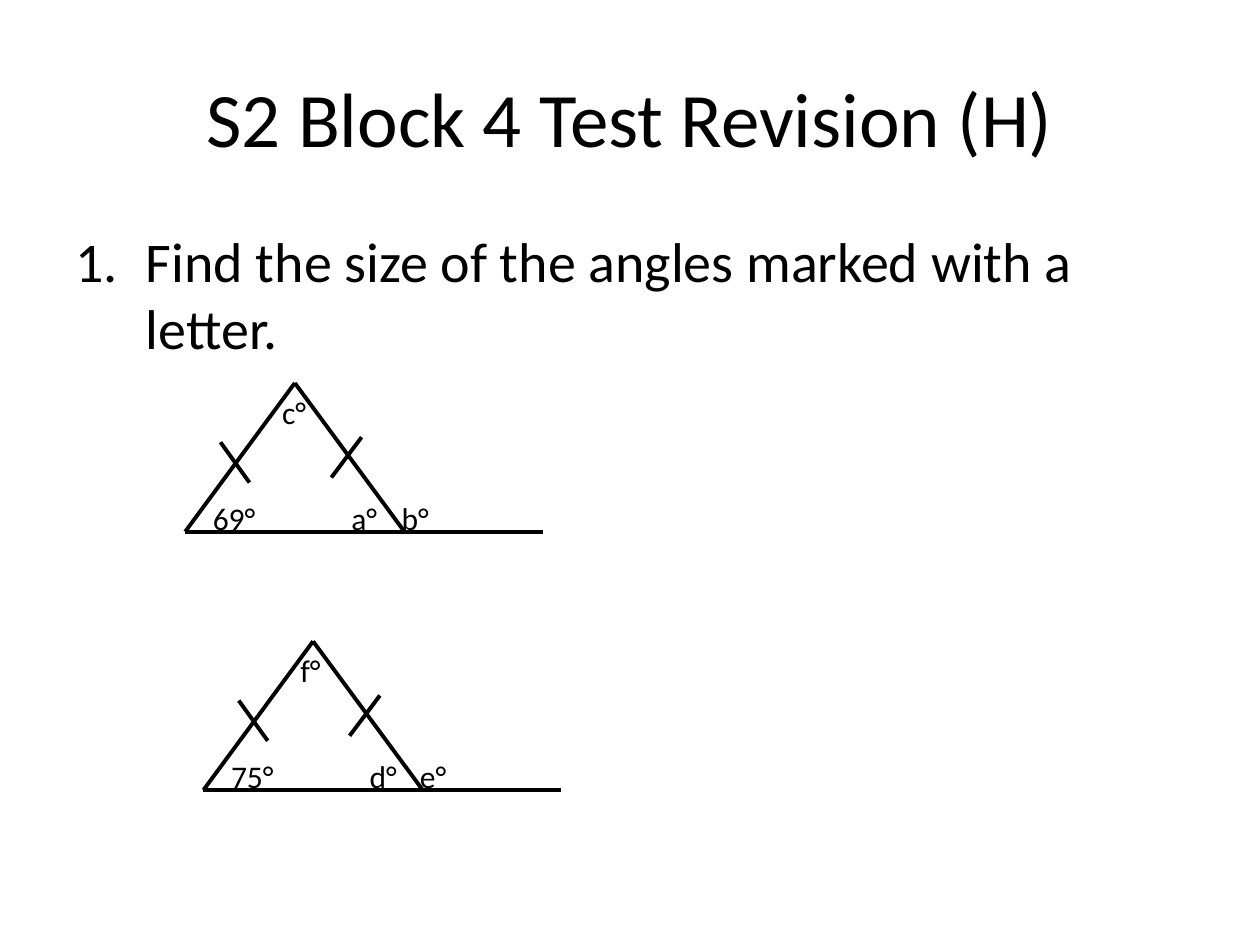
from lxml import etree
from pptx import Presentation
from pptx import util as u
from pptx.dml.color import RGBColor
from pptx.enum import shapes, text
from pptx.oxml.ns import qn

COLOURS = {"ink": "000000", "paper": "FFFFFF"}
FONT = "Calibri"
COLUMNS, ROWS = 1000, 750
WIDTH, HEIGHT = u.Inches(10), u.Inches(7.5)

# Grid steps (columns, rows) from the lower left corner of a triangle
CORNER, APEX, FOOT, BASE_END = (0, 0), (87, -118), (174, 0), (284, 0)
SEGMENTS = [
    (CORNER, BASE_END),
    (CORNER, APEX),
    (FOOT, APEX),
    ((116, -43), (140, -75)),
    ((51, -39), (28, -71)),
]
LABEL_SPOTS = [(12, -31, 55), (122, -31, 44), (162, -31, 44), (67, -115, 40)]
LABEL_ROWS = 40

FIGURES = [
    ((147, 422), ["69°", "a°", "b°", "c°"]),
    ((161.5, 627), ["75°", "d°", "e°", "f°"]),
]


def x_at(columns):
    return round(WIDTH * columns / COLUMNS)


def y_at(rows):
    return round(HEIGHT * rows / ROWS)


def colour(name):
    return RGBColor.from_string(COLOURS[name])


def add_text(parent, words, left, top, width, height, size, frame_format, align=None):
    """Place one paragraph on the grid and return it."""
    box = parent.add_textbox(x_at(left), y_at(top), x_at(width), y_at(height))
    for name, value in frame_format.items():
        setattr(box.text_frame, name, value)
    para = box.text_frame.paragraphs[0]
    para.alignment = align
    span = para.add_run()
    span.text = words
    for name, value in {"name": FONT, "size": u.Pt(size)}.items():
        setattr(span.font, name, value)
    span.font.color.rgb = colour("ink")
    return para


def number_paragraph(para, indent):
    properties = para._p.get_or_add_pPr()
    properties.set("marL", str(indent))
    properties.set("indent", str(-indent))
    etree.SubElement(properties, qn("a:buFont"), typeface="+mj-lt")
    etree.SubElement(properties, qn("a:buAutoNum"), type="arabicPeriod")


def add_line(parent, start, end):
    line = parent.add_connector(
        shapes.MSO_CONNECTOR.STRAIGHT,
        x_at(start[0]), y_at(start[1]), x_at(end[0]), y_at(end[1]),
    )
    line.line.color.rgb = colour("ink")
    line.line.width = u.Pt(2.25)
    etree.SubElement(line._element.spPr, qn("a:effectLst"))


def add_triangle(page, origin, labels):
    """Group an isosceles triangle, its extended base, ticks and angles."""
    column, row = origin
    parts = page.shapes.add_group_shape().shapes
    for ends in SEGMENTS:
        add_line(parts, *[(column + x, row + y) for x, y in ends])
    label_format = {
        "word_wrap": False,
        "auto_size": text.MSO_AUTO_SIZE.SHAPE_TO_FIT_TEXT,
    }
    for label, (x, y, width) in zip(labels, LABEL_SPOTS):
        add_text(parts, label, column + x, row + y, width, LABEL_ROWS, 18, label_format)


def main():
    deck = Presentation()
    deck.slide_width, deck.slide_height = WIDTH, HEIGHT
    page = deck.slides.add_slide(deck.slide_layouts[6])
    page.background.fill.solid()
    page.background.fill.fore_color.rgb = colour("paper")

    add_text(
        page.shapes, "S2 Block 4 Test Revision (H)", 50, 30, 900, 125, 44,
        {"word_wrap": True, "vertical_anchor": text.MSO_ANCHOR.MIDDLE},
        text.PP_ALIGN.CENTER,
    )
    question = add_text(
        page.shapes, "Find the size of the angles marked with a letter.",
        50, 175, 900, 495, 32, {"word_wrap": True},
    )
    number_paragraph(question, x_at(56))
    for origin, labels in FIGURES:
        add_triangle(page, origin, labels)
    deck.save("out.pptx")


if __name__ == "__main__":
    main()
